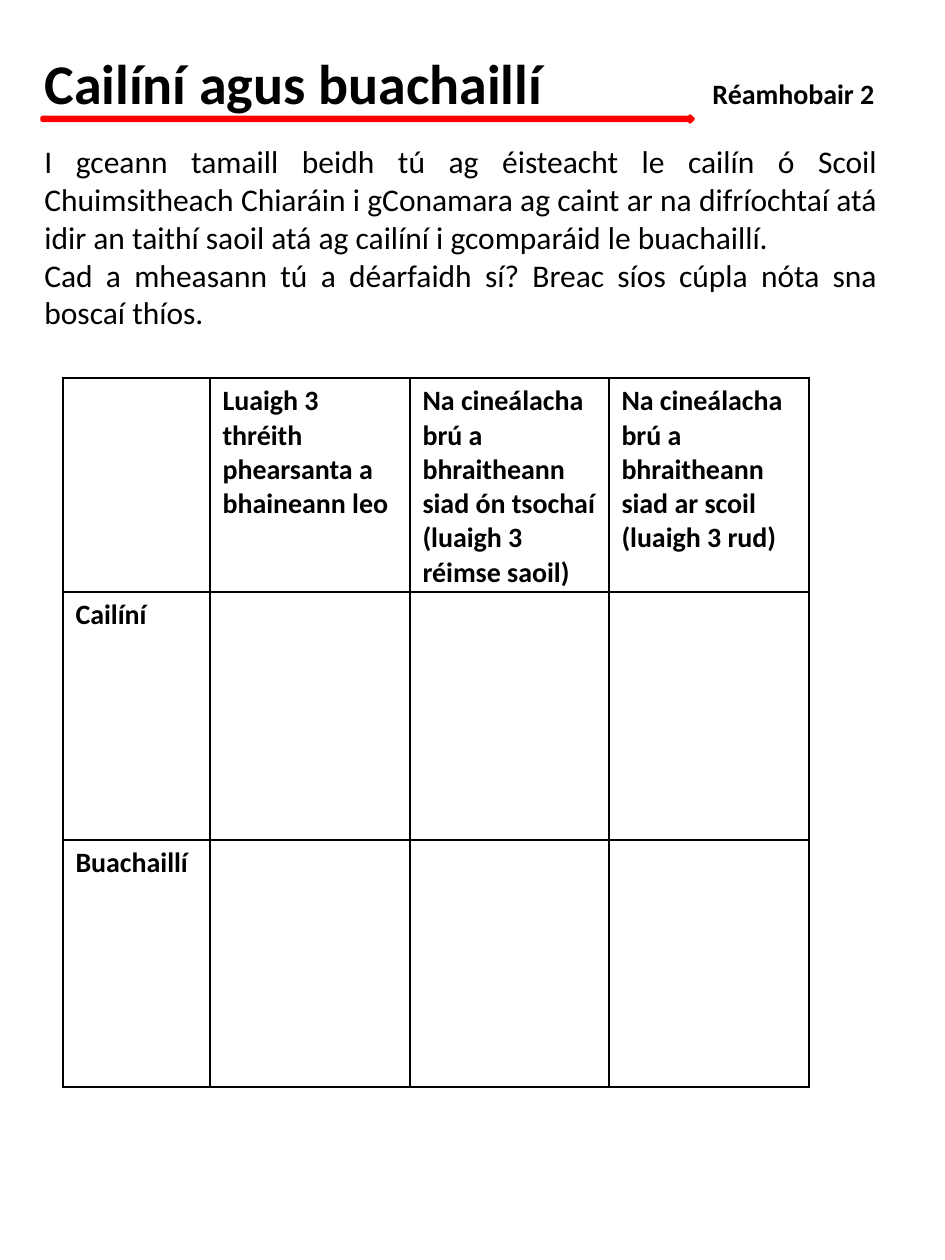
from dataclasses import dataclass

from lxml import etree
from pptx import Presentation
from pptx.dml.color import RGBColor
from pptx.enum.shapes import MSO_SHAPE
from pptx.enum.text import PP_ALIGN
from pptx.oxml.ns import qn
from pptx.util import Pt

ARROW = MSO_SHAPE.RIGHT_ARROW
JUSTIFY = PP_ALIGN.JUSTIFY
SCALE = 914400 / 126


def px(*sizes):
    return [round(size * SCALE) for size in sizes]


@dataclass(frozen=True)
class Theme:
    font: str = "Calibri"
    ink: str = "000000"
    red: str = "FF0000"
    title: int = 32
    body: int = 18
    small: int = 16
    rule: int = 2
    edge: int = 1


class Page:
    """Draws the elements of one slide in a shared theme."""

    def __init__(self, slide, theme):
        self.shapes = slide.shapes
        self.theme = theme

    def style(self, para, size, bold=False):
        font = para.font
        font.name = self.theme.font
        font.size = Pt(size)
        font.bold = bold
        font.color.rgb = RGBColor.from_string(self.theme.ink)

    def frame(self, box):
        frame = self.shapes.add_textbox(*px(*box)).text_frame
        frame.word_wrap = True
        return frame

    def title(self, box, text, label, stop):
        para = self.frame(box).paragraphs[0]
        tabs = etree.SubElement(para._p.get_or_add_pPr(), qn("a:tabLst"))
        etree.SubElement(tabs, qn("a:tab"), pos=str(px(stop)[0]), algn="r")
        self.style(para, self.theme.title, True)
        para.add_run().text = text + "\t"
        run = para.add_run()
        run.text = label
        run.font.size = Pt(self.theme.small)

    def body(self, box, text):
        frame = self.frame(box)
        frame.text = text
        for para in frame.paragraphs:
            para.alignment = JUSTIFY
            self.style(para, self.theme.body)

    def arrow(self, box):
        shape = self.shapes.add_shape(ARROW, *px(*box))
        shape.shadow.inherit = False
        red = RGBColor.from_string(self.theme.red)
        shape.fill.solid()
        shape.fill.fore_color.rgb = red
        shape.line.color.rgb = red
        shape.line.width = Pt(self.theme.rule)

    def border(self, cell):
        props = cell._tc.get_or_add_tcPr()
        for spot, side in enumerate(("lnL", "lnR", "lnT", "lnB")):
            line = etree.Element(qn("a:" + side), w=str(Pt(self.theme.edge)))
            fill = etree.SubElement(line, qn("a:solidFill"))
            etree.SubElement(fill, qn("a:srgbClr"), val=self.theme.ink)
            props.insert(spot, line)

    def table(self, left, top, cols, rows, cells):
        box = px(left, top, sum(cols), sum(rows))
        table = self.shapes.add_table(len(rows), len(cols), *box).table
        table.first_row = table.horz_banding = False
        for col, width in zip(table.columns, px(*cols)):
            col.width = width
        for row, height, texts in zip(table.rows, px(*rows), cells):
            row.height = height
            for cell, text in zip(row.cells, texts):
                cell.text = text
                cell.margin_bottom = px(2)[0]
                cell.fill.background()
                self.border(cell)
                for para in cell.text_frame.paragraphs:
                    self.style(para, self.theme.small, True)


def main():
    deck = Presentation()
    deck.slide_width, deck.slide_height = px(945, 1260)
    page = Page(deck.slides.add_slide(deck.slide_layouts[6]), Theme())
    page.title((32, 42, 860, 80), "Cailíní agus buachaillí", "Réamhobair 2", 830)
    page.body(
        (32, 136, 858, 210),
        "I gceann tamaill beidh tú ag éisteacht le cailín ó Scoil "
        "Chuimsitheach Chiaráin i gConamara ag caint ar na difríochtaí atá "
        "idir an taithí saoil atá ag cailíní i gcomparáid le buachaillí.\n"
        "Cad a mheasann tú a déarfaidh sí? Breac síos cúpla nóta sna "
        "boscaí thíos.",
    )
    page.arrow((42, 116, 651, 6))
    stress = "Na cineálacha brú a bhraitheann siad "
    page.table(
        63, 378, (147, 200, 199, 200), (214, 248, 247),
        (
            ("", "Luaigh 3 thréith phearsanta a bhaineann leo",
             stress + "ón tsochaí (luaigh 3 réimse saoil)",
             stress + "ar scoil\n(luaigh 3 rud)"),
            ("Cailíní", "", "", ""),
            ("Buachaillí", "", "", ""),
        ),
    )
    deck.save("out.pptx")


if __name__ == "__main__":
    main()
